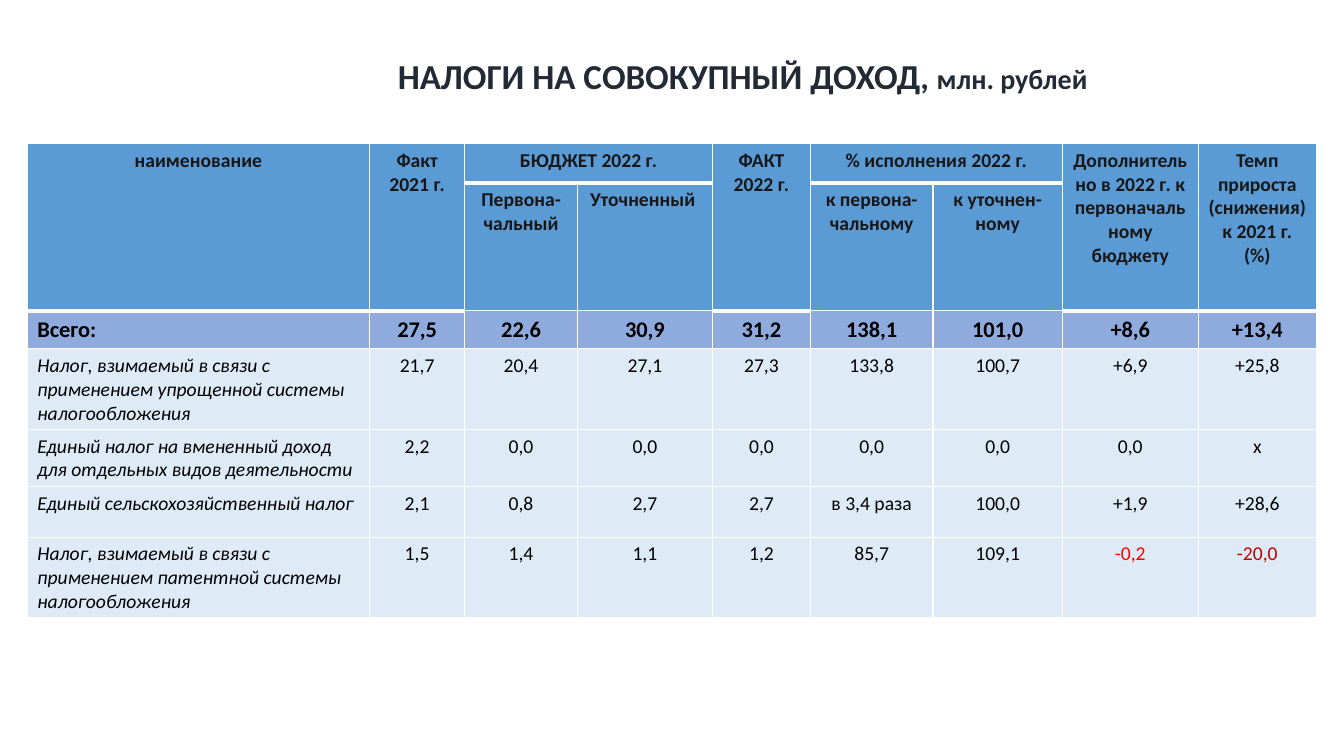
from lxml import etree
from pptx import Presentation
from pptx.dml.color import RGBColor
from pptx.enum.text import PP_ALIGN
from pptx.oxml.ns import qn
from pptx.util import Pt

CENTER, LEFT = PP_ALIGN.CENTER, PP_ALIGN.LEFT
FONT = "Calibri"
WHITE, BLACK, HEADER_TEXT, TITLE_TEXT = "FFFFFF", "000000", "181717", "222A35"
HEADER_FILL, TOTAL_FILL, BODY_FILL = "5B9BD5", "8FAADC", "DEEBF7"

TITLE = [("НАЛОГИ НА СОВОКУПНЫЙ ДОХОД", 25), (", ", 24), ("млн. рублей", 20)]
HEADERS = [
    ["наименование", "Факт 2021 г.", "БЮДЖЕТ 2022 г.", "", "ФАКТ 2022 г.",
     "% исполнения 2022 г.", "", "Дополнительно в 2022 г. к первоначальному бюджету",
     "Темп прироста (снижения) к 2021 г. (%)"],
    ["", "", "Первона-чальный", "Уточненный ", "", "к первона-чальному",
     "к уточнен-ному", "", ""],
]
TOTAL = ["Всего:", "27,5", "22,6", "30,9", "31,2", "138,1", "101,0", "+8,6", "+13,4"]
TAXES = [
    ["Налог, взимаемый в связи с применением упрощенной системы налогообложения",
     "21,7", "20,4", "27,1", "27,3", "133,8", "100,7", "+6,9", "+25,8"],
    ["Единый налог на вмененный доход для отдельных видов деятельности",
     "2,2", "0,0", "0,0", "0,0", "0,0", "0,0", "0,0", "х"],
    ["Единый сельскохозяйственный налог",
     "2,1", "0,8", "2,7", "2,7", "в 3,4 раза", "100,0", "+1,9", "+28,6"],
    ["Налог, взимаемый в связи с применением патентной системы налогообложения",
     "1,5", "1,4", "1,1", "1,2", "85,7", "109,1", "-0,2", "-20,0"],
]
ROWS = HEADERS + [TOTAL] + TAXES
NEGATIVE = {7: "FF0000", 8: "C00000"}
TALL_COLS, WIDE_COLS = (0, 1, 4, 7, 8), (2, 5)
COL_WIDTHS = [244.5, 68, 80.5, 96.5, 70, 87.5, 92.5, 97, 84.5]
ROW_HEIGHTS = [28.3, 91, 27, 57.5, 41, 36, 57.5]


def rgb(value):
    return RGBColor.from_string(value)


def add_run(p, text, size, color, bold=False, italic=False):
    r = p.add_run()
    r.text = text
    r.font.name, r.font.size = FONT, Pt(size)
    r.font.bold, r.font.italic = bold, italic
    r.font.color.rgb = rgb(color)


def set_borders(cell, widths):
    """Draw white borders; widths maps L, R, T, B to points, in that order."""
    tc_pr = cell._tc.get_or_add_tcPr()
    for i, (side, width) in enumerate(widths.items()):
        ln = etree.Element(qn(f"a:ln{side}"), w=str(Pt(width)))
        fill = etree.SubElement(ln, qn("a:solidFill"))
        etree.SubElement(fill, qn("a:srgbClr"), val=WHITE)
        tc_pr.insert(i, ln)


def row_style(row):
    """Return fill, text size, text colour and boldness of a table row."""
    if row < len(HEADERS):
        return HEADER_FILL, 14, HEADER_TEXT, True
    if row == len(HEADERS):
        return TOTAL_FILL, 16, BLACK, True
    return BODY_FILL, 14, BLACK, False


prs = Presentation()
prs.slide_width, prs.slide_height = Pt(960), Pt(540)
slide = prs.slides.add_slide(prs.slide_layouts[6])

title = slide.shapes.add_textbox(Pt(73.5), Pt(35.5), Pt(914), Pt(37.5))
title.text_frame.word_wrap = True
p = title.text_frame.paragraphs[0]
p.alignment = CENTER
for text, size in TITLE:
    add_run(p, text, size, TITLE_TEXT, bold=True)

table = slide.shapes.add_table(
    len(ROWS), len(COL_WIDTHS), Pt(19.5), Pt(102.5),
    Pt(sum(COL_WIDTHS)), Pt(sum(ROW_HEIGHTS))).table
table.first_row = table.horz_banding = False
for col, width in zip(table.columns, COL_WIDTHS):
    col.width = Pt(width)
for row, height in zip(table.rows, ROW_HEIGHTS):
    row.height = Pt(height)
for col in TALL_COLS:
    table.cell(0, col).merge(table.cell(1, col))
for col in WIDE_COLS:
    table.cell(0, col).merge(table.cell(0, col + 1))

for i, values in enumerate(ROWS):
    fill, size, row_color, bold = row_style(i)
    for j, text in enumerate(values):
        cell = table.cell(i, j)
        cell.fill.solid()
        cell.fill.fore_color.rgb = rgb(fill)
        merged = cell.is_merge_origin or cell.is_spanned
        borders = {"L": 1, "R": 1}
        if i == 0:
            borders["T"] = 1
        borders["B"] = 3 if merged else 1
        set_borders(cell, borders)
        if not text:
            continue
        is_tax = i > len(HEADERS)
        p = cell.text_frame.paragraphs[0]
        p.alignment = LEFT if j == 0 and i >= len(HEADERS) else CENTER
        color = NEGATIVE[j] if text.startswith("-") else row_color
        add_run(p, text, size, color, bold, italic=is_tax and j == 0)

prs.save("out.pptx")
